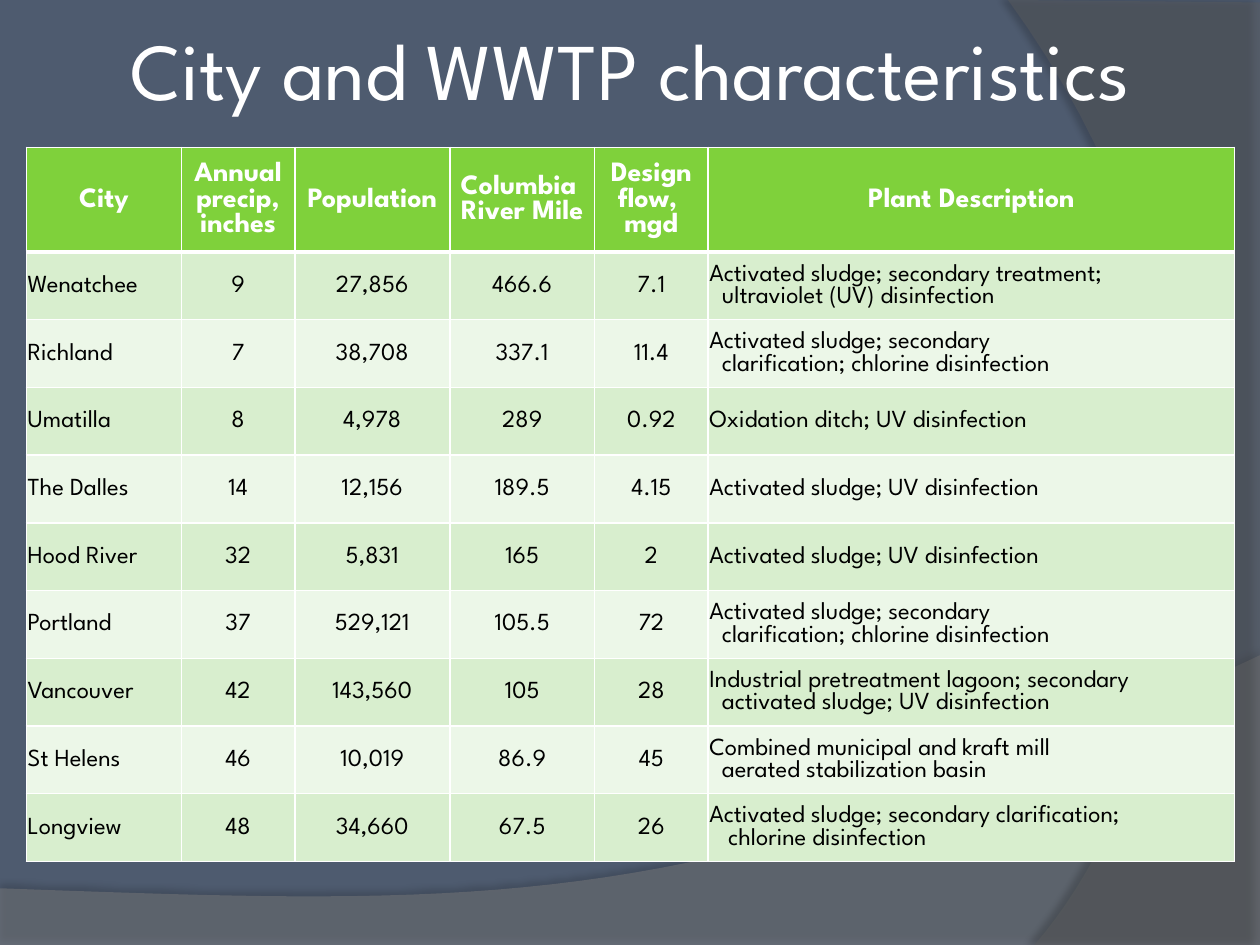
from lxml import etree
from pptx import Presentation
from pptx.dml.color import RGBColor
from pptx.enum.text import MSO_ANCHOR, MSO_AUTO_SIZE, PP_ALIGN
from pptx.oxml import parse_xml
from pptx.oxml.ns import nsdecls, qn
from pptx.util import Inches, Pt

FONT = "League Spartan"
SLATE = RGBColor(0x4E, 0x5B, 0x6F)
WAVE_GRAY = RGBColor(0x7F, 0x7F, 0x7F)
ARC_GRAY = RGBColor(0x5E, 0x5E, 0x5E)
GREEN = RGBColor(0x7F, 0xD1, 0x3B)
BAND_DARK = RGBColor(0xD8, 0xEE, 0xCE)
BAND_LIGHT = RGBColor(0xEC, 0xF7, 0xE8)
WHITE = RGBColor(0xFF, 0xFF, 0xFF)
BLACK = RGBColor(0, 0, 0)

HEADERS = ["City", "Annual precip, inches", "Population",
           "Columbia \nRiver Mile", "Design flow, \nmgd", "Plant Description"]
CITIES = [
    ["Wenatchee", "9", "27,856", "466.6", "7.1",
     "Activated sludge; secondary treatment;\nultraviolet (UV) disinfection"],
    ["Richland", "7", "38,708", "337.1", "11.4",
     "Activated sludge; secondary\nclarification; chlorine disinfection"],
    ["Umatilla", "8", "4,978", "289", "0.92", "Oxidation ditch; UV disinfection"],
    ["The Dalles", "14", "12,156", "189.5", "4.15", "Activated sludge; UV disinfection"],
    ["Hood River", "32", "5,831", "165", "2", "Activated sludge; UV disinfection"],
    ["Portland", "37", "529,121", "105.5", "72",
     "Activated sludge; secondary\nclarification; chlorine disinfection"],
    ["Vancouver", "42", "143,560", "105", "28",
     "Industrial pretreatment lagoon; secondary\nactivated sludge; UV disinfection"],
    ["St Helens", "46", "10,019", "86.9", "45",
     "Combined municipal and kraft mill\naerated stabilization basin"],
    ["Longview", "48", "34,660", "67.5", "26",
     "Activated sludge; secondary clarification;\nchlorine disinfection"],
]
COL_WIDTHS = [1.23, 0.9, 1.23, 1.15, 0.9, 4.18]
TABLE_H, HEADER_H = 5.67, 0.83


def curve(p0, p1, p2, p3, steps=40):
    """Points along a cubic Bezier curve, without its start."""
    points = []
    for i in range(1, steps + 1):
        t = i / steps
        weights = ((1 - t) ** 3, 3 * t * (1 - t) ** 2, 3 * t * t * (1 - t), t ** 3)
        points.append(tuple(sum(w * p[axis] for w, p in zip(weights, (p0, p1, p2, p3)))
                            for axis in (0, 1)))
    return points


def add_run(p, text, size, color, bold=False):
    r = p.add_run()
    r.text = text
    r.font.name = FONT
    r.font.size = Pt(size)
    r.font.bold = bold
    r.font.color.rgb = color


prs = Presentation()
prs.slide_width, prs.slide_height = Inches(10), Inches(7.5)
s = prs.slides.add_slide(prs.slide_layouts[5])
s.background.fill.solid()
s.background.fill.fore_color.rgb = SLATE

# Background sweeps: outline, colour, opacity %, shadow opacity %, distance, direction
wave = [(0, 7.05), (0, 7.51), (10, 7.51), (10, 5.2)]
wave += curve((10, 5.2), (5.59, 7.29), (3.91, 7.19), (0, 7.05))
arc = [(10, 0.02), (10, 7.5), (8.21, 7.5)]
arc += curve((8.21, 7.5), (9.35, 6.19), (10.18, 3), (8, 0))
for points, color, opacity, shade, dist, angle in [
        (wave, WAVE_GRAY, 45, 35, 3.5, 270), (arc, ARC_GRAY, 40, 45, 4, 180)]:
    start, *rest = [(Inches(x), Inches(y)) for x, y in points]
    builder = s.shapes.build_freeform(*start)
    builder.add_line_segments(rest, close=True)
    sp = builder.convert_to_shape()
    sp.fill.solid()
    sp.fill.fore_color.rgb = color
    sp.line.fill.background()
    clr = sp.element.spPr.find(qn("a:solidFill"))[0]
    etree.SubElement(clr, qn("a:alpha"), val=str(opacity * 1000))
    sp.element.spPr.append(parse_xml(
        f'<a:effectLst {nsdecls("a")}><a:outerShdw blurRad="{Pt(4)}" dist="{Pt(dist)}" '
        f'dir="{angle * 60000}" algn="ctr" rotWithShape="0"><a:srgbClr val="000000">'
        f'<a:alpha val="{shade * 1000}"/></a:srgbClr></a:outerShdw></a:effectLst>'))

# Title, brought in front of the sweeps
title = s.shapes.title
title.element.getparent().append(title.element)
title.left, title.top, title.width, title.height = 0, 0, Inches(10), Inches(1.08)
tf = title.text_frame
tf.auto_size = MSO_AUTO_SIZE.NONE
tf.word_wrap = True
tf.vertical_anchor = MSO_ANCHOR.MIDDLE
tf.margin_left = tf.margin_right = tf.margin_top = tf.margin_bottom = Inches(0.05)
tf.paragraphs[0].alignment = PP_ALIGN.CENTER
add_run(tf.paragraphs[0], "City and WWTP characteristics", 46, WHITE)

# Table grid
rows = [HEADERS] + CITIES
table = s.shapes.add_table(len(rows), len(HEADERS), Inches(0.21), Inches(1.17),
                           Inches(9.58), Inches(TABLE_H)).table
for col, width in zip(table.columns, COL_WIDTHS):
    col.width = Inches(width)
for i, row in enumerate(table.rows):
    row.height = Inches(HEADER_H if i == 0 else (TABLE_H - HEADER_H) / len(CITIES))

# Table cells
for i, values in enumerate(rows):
    header = i == 0
    for j, value in enumerate(values):
        cell = table.cell(i, j)
        cell.vertical_anchor = MSO_ANCHOR.MIDDLE
        cell.margin_left = cell.margin_right = cell.margin_top = Inches(0.01)
        cell.margin_bottom = 0

        # White borders, thick between header and body
        tcPr = cell._tc.get_or_add_tcPr()
        for side in "LRTB":
            thick = (header and side == "B") or (i == 1 and side == "T")
            tcPr.append(parse_xml(
                f'<a:ln{side} {nsdecls("a")} w="{Pt(3 if thick else 1)}"><a:solidFill>'
                f'<a:srgbClr val="{WHITE}"/></a:solidFill></a:ln{side}>'))
        cell.fill.solid()
        cell.fill.fore_color.rgb = GREEN if header else BAND_DARK if i % 2 else BAND_LIGHT

        p = cell.text_frame.paragraphs[0]
        centred = header or 0 < j < 5
        p.alignment = PP_ALIGN.CENTER if centred else PP_ALIGN.LEFT
        for k, line in enumerate(value.split("\n")):
            if k:
                p.add_line_break()
            add_run(p, line, 16 if header else 14, WHITE if header else BLACK, header)
        if "\n" in value and not header:  # hanging second line
            hang = Inches(0.15 if values[0] == "Longview" else 0.1)
            pPr = p._p.get_or_add_pPr()
            pPr.set("marL", str(hang))
            pPr.set("indent", str(-hang))

prs.save("out.pptx")
